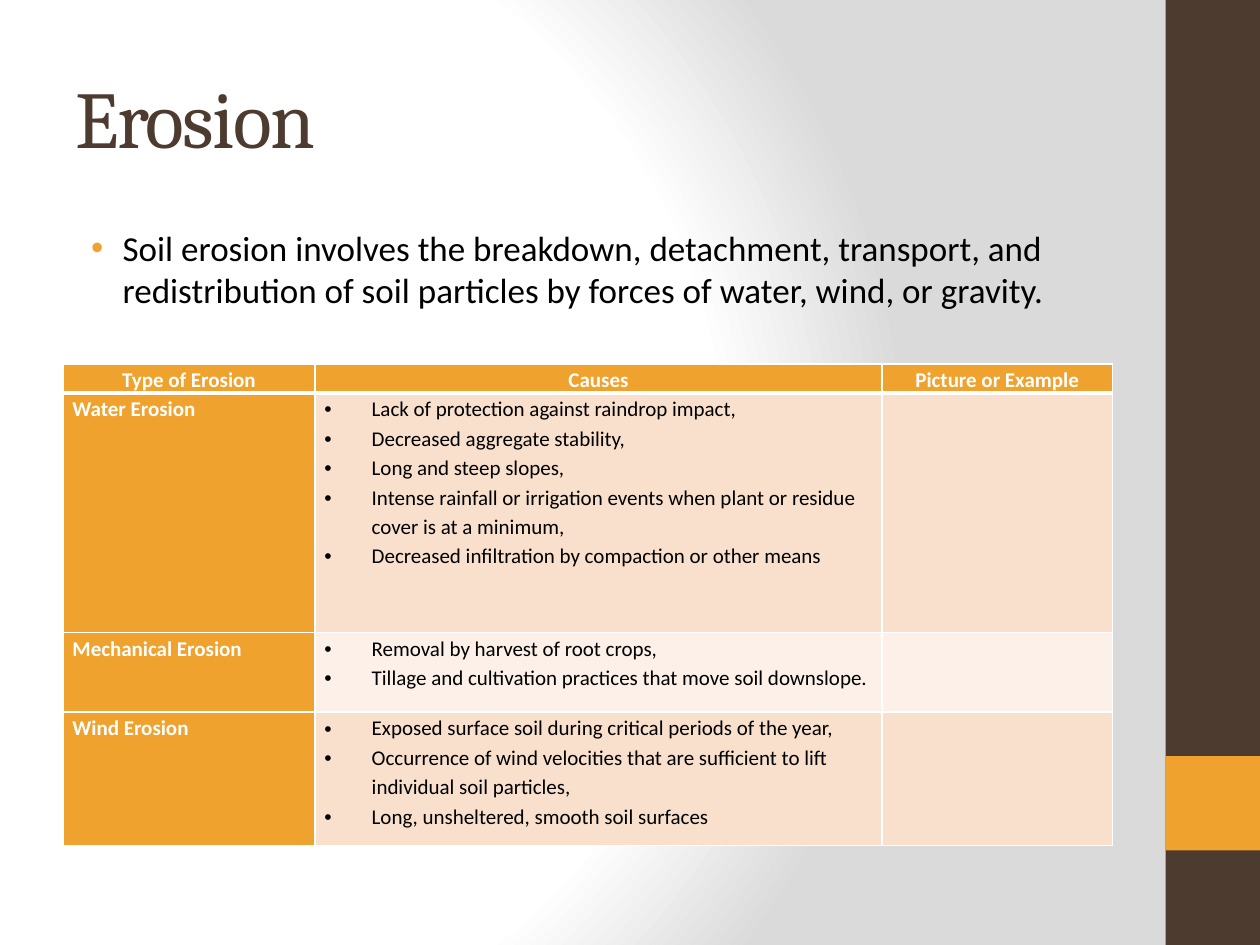
"""Build the soil erosion slide with its table of causes."""
from pptx import Presentation
from pptx import util as u
from pptx.dml.color import RGBColor
from pptx.enum import shapes, text
from pptx.oxml import parse_xml
from pptx.oxml.ns import nsdecls

BROWN, ORANGE, WHITE, BLACK = "4E3B30", "F0A22E", "FFFFFF", "000000"
PEACH, PALE = "F9E0CD", "FCF0E8"
LEFT, WIDTH = 36, 599.76
COLUMN_WIDTHS = [144, 324, 131.76]
ROW_HEIGHTS = [15.4, 136.8, 45.6, 76.3]
HEADINGS = ["Type of Erosion", "Causes", "Picture or Example"]
CAUSES = {
    "Water Erosion": [
        "Lack of protection against raindrop impact,",
        "Decreased aggregate stability,",
        "Long and steep slopes,",
        "Intense rainfall or irrigation events when plant or residue cover is at a minimum,",
        "Decreased infiltration by compaction or other means",
    ],
    "Mechanical Erosion": [
        "Removal by harvest of root crops,",
        "Tillage and cultivation practices that move soil downslope.",
    ],
    "Wind Erosion": [
        "Exposed surface soil during critical periods of the year,",
        "Occurrence of wind velocities that are sufficient to lift individual soil particles,",
        "Long, unsheltered, smooth soil surfaces",
    ],
}


def paint(fill, color):
    """Give a fill one solid colour."""
    fill.solid()
    fill.fore_color.rgb = RGBColor.from_string(color)


def set_background(slide):
    """Give the slide a circular white to grey gradient."""
    stops = "".join(
        f'<a:gs pos="{place * 1000}"><a:srgbClr val="{color}"/></a:gs>'
        for place, color in [(0, WHITE), (75, WHITE), (100, "DADADA")])
    slide.element.cSld.insert(0, parse_xml(
        f'<p:bg {nsdecls("p", "a")}><p:bgPr><a:gradFill rotWithShape="1">'
        f'<a:gsLst>{stops}</a:gsLst><a:path path="circle">'
        '<a:fillToRect l="20000" t="50000" r="100000" b="50000"/></a:path>'
        '</a:gradFill><a:effectLst/></p:bgPr></p:bg>'))


def add_band(slide, top, height, color):
    """Add a block of the strip along the right edge."""
    band = slide.shapes.add_shape(
        shapes.MSO_SHAPE.RECTANGLE, u.Pt(666), u.Pt(top), u.Pt(54), u.Pt(height))
    band.shadow.inherit = False
    paint(band.fill, color)
    band.line.fill.background()


def add_run(paragraph, words, size, color, face="Calibri", bold=False):
    """Add one formatted run and return it."""
    run = paragraph.add_run()
    run.text = words
    run.font.size = u.Pt(size)
    run.font.name = face
    run.font.bold = bold
    run.font.color.rgb = RGBColor.from_string(color)
    return run


def add_bullet(paragraph, margin, indent, color):
    """Give a paragraph a hanging round bullet."""
    properties = paragraph._p.get_or_add_pPr()
    properties.set("marL", str(u.Pt(margin)))
    properties.set("indent", str(u.Pt(indent)))
    for tag in (f'<a:buClr {nsdecls("a")}><a:srgbClr val="{color}"/></a:buClr>',
                f'<a:buFont {nsdecls("a")} typeface="Arial"/>',
                f'<a:buChar {nsdecls("a")} char="•"/>'):
        properties.append(parse_xml(tag))


def add_text_box(slide, top, height, anchor):
    """Add a wrapping text box and return its first paragraph."""
    box = slide.shapes.add_textbox(u.Pt(LEFT), u.Pt(top), u.Pt(WIDTH), u.Pt(height))
    box.text_frame.word_wrap = True
    box.text_frame.vertical_anchor = anchor
    return box.text_frame.paragraphs[0]


def style_cell(cell, color, top=1, bottom=1):
    """Set the fill, margins and white borders of a cell."""
    paint(cell.fill, color)
    cell.margin_left = cell.margin_right = u.Pt(5.4)
    cell.margin_top = cell.margin_bottom = 0
    borders = {"lnL": 1, "lnR": 1, "lnT": top, "lnB": bottom}
    for place, (side, weight) in enumerate(borders.items()):
        cell._tc.get_or_add_tcPr().insert(place, parse_xml(
            f'<a:{side} {nsdecls("a")} w="{u.Pt(weight)}"><a:solidFill>'
            f'<a:srgbClr val="{WHITE}"/></a:solidFill></a:{side}>'))


def write_label(cell, words, align=text.PP_ALIGN.LEFT):
    """Write a bold white label in a cell."""
    label = cell.text_frame.paragraphs[0]
    label.alignment = align
    label.line_spacing = 1.15
    label.space_after = u.Pt(10)
    add_run(label, words, 12, WHITE, bold=True)


def write_causes(cell, causes):
    """Write a bulleted list of causes in a cell."""
    for number, cause in enumerate(causes):
        frame = cell.text_frame
        item = frame.add_paragraph() if number else frame.paragraphs[0]
        item.line_spacing = 1.15
        add_bullet(item, 27, -27, BLACK)
        add_run(item, cause, 12, BLACK)


def add_causes_table(slide):
    """Add the table of erosion types and their causes."""
    table = slide.shapes.add_table(
        len(ROW_HEIGHTS), len(COLUMN_WIDTHS), u.Pt(LEFT), u.Pt(208),
        u.Pt(WIDTH), u.Pt(sum(ROW_HEIGHTS))).table
    for column, width in zip(table.columns, COLUMN_WIDTHS):
        column.width = u.Pt(width)
    for row, height in zip(table.rows, ROW_HEIGHTS):
        row.height = u.Pt(height)
    for column, heading in enumerate(HEADINGS):
        cell = table.cell(0, column)
        style_cell(cell, ORANGE, bottom=3)
        if column < 2:
            cell.vertical_anchor = text.MSO_ANCHOR.MIDDLE
        write_label(cell, heading, text.PP_ALIGN.CENTER)
    for row, (kind, causes) in enumerate(CAUSES.items(), start=1):
        tint = PEACH if row % 2 else PALE
        for column, color in enumerate([ORANGE, tint, tint]):
            style_cell(table.cell(row, column), color, top=3 if row == 1 else 1)
        write_label(table.cell(row, 0), kind)
        write_causes(table.cell(row, 1), causes)


def main():
    """Build and save the slide."""
    deck = Presentation()
    deck.slide_width, deck.slide_height = u.Pt(720), u.Pt(540)
    slide = deck.slides.add_slide(deck.slide_layouts[6])
    set_background(slide)
    add_band(slide, 0, 540, BROWN)
    add_band(slide, 432, 54, ORANGE)

    title = add_text_box(slide, 21.6, 90, text.MSO_ANCHOR.MIDDLE)
    heading = add_run(title, "Erosion", 46, BROWN, "Cambria")
    heading.font._element.set("spc", "-100")

    definition = add_text_box(slide, 126, 378, text.MSO_ANCHOR.TOP)
    definition.space_before = u.Pt(4)
    add_bullet(definition, 27, -18, ORANGE)
    add_run(definition, "Soil erosion involves the breakdown, detachment, transport, and "
            "redistribution of soil particles by forces of water, wind, or gravity.",
            20, BLACK)

    add_causes_table(slide)
    deck.save("out.pptx")


if __name__ == "__main__":
    main()
